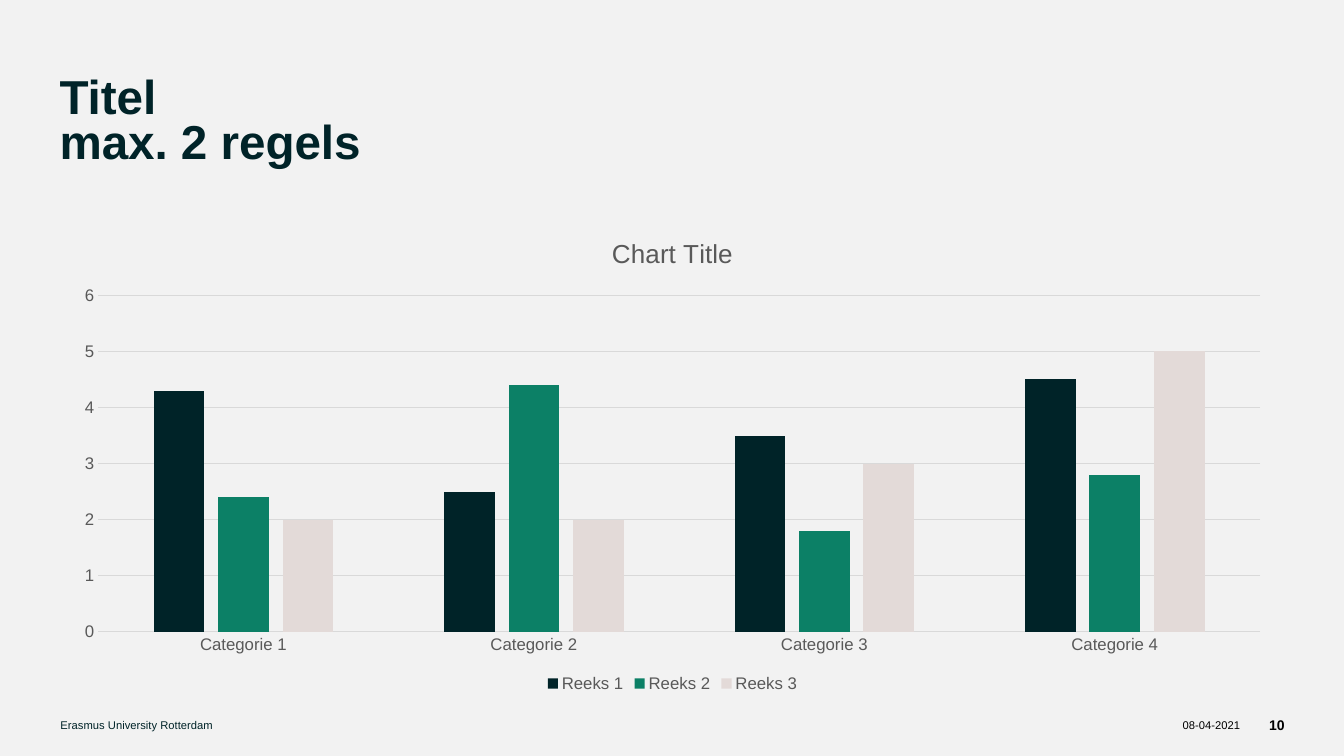
from pptx import Presentation, util as u
from pptx.chart.data import CategoryChartData
from pptx.dml.color import RGBColor
from pptx.enum import chart as ch, text

COLORS = {"back": "F2F2F2", "dark": "002328", "green": "0C8066", "sand": "E3DAD8",
          "black": "000000", "gray": "595959", "grid": "D9D9D9"}


def color(name):
    return RGBColor.from_string(COLORS[name])


def style_font(font, size, color_name, bold=False):
    for key, value in {"name": "Arial", "size": u.Pt(size), "bold": bold}.items():
        setattr(font, key, value)
    font.color.rgb = color(color_name)


# Deck and page
deck = Presentation()
deck.slide_width, deck.slide_height = u.Inches(13.33), u.Inches(7.5)
page = deck.slides.add_slide(deck.slide_layouts[6])
page.background.fill.solid()
page.background.fill.fore_color.rgb = color("back")

# Title and footer
left, right = text.PP_ALIGN.LEFT, text.PP_ALIGN.RIGHT
top, middle = text.MSO_ANCHOR.TOP, text.MSO_ANCHOR.MIDDLE
labels = [
    ("Titel\vmax. 2 regels", (0.59, 0.79, 12.15, 0.78), 34, "dark", True, left, top),
    ("Erasmus University Rotterdam", (0.6, 7.12, 10.79, 0.14), 8, "dark", False, left, middle),
    ("08-04-2021", (11.54, 7.12, 0.76, 0.14), 8, "black", False, right, middle),
    ("10", (12.45, 7.12, 0.29, 0.14), 10, "black", True, right, middle),
]
for words, place, size, color_name, bold, align, anchor in labels:
    box = page.shapes.add_textbox(*map(u.Inches, place))
    frame_format = {"margin_left": 0, "margin_top": 0, "margin_right": 0, "margin_bottom": 0,
                    "word_wrap": True, "vertical_anchor": anchor}
    for key, value in frame_format.items():
        setattr(box.text_frame, key, value)
    para = box.text_frame.paragraphs[0]
    para.text = words
    para.alignment = align
    if anchor == top:
        para.line_spacing = u.Pt(32)
    style_font(para.font, size, color_name, bold)
    for span in para.runs:
        style_font(span.font, size, color_name, bold)

# Chart data
series_rows = [
    ("Reeks 1", (4.3, 2.5, 3.5, 4.5), "dark"),
    ("Reeks 2", (2.4, 4.4, 1.8, 2.8), "green"),
    ("Reeks 3", (2, 2, 3, 5), "sand"),
]
data = CategoryChartData()
data.categories = [f"Categorie {number}" for number in range(1, 5)]
for name, values, _ in series_rows:
    data.add_series(name, values)
place = map(u.Inches, (0.6, 2.15, 12.14, 4.76))
chart = page.shapes.add_chart(ch.XL_CHART_TYPE.COLUMN_CLUSTERED, *place, data).chart
style_font(chart.font, 10, "black")

# Columns
plot = chart.plots[0]
for key, value in {"gap_width": 219, "overlap": -27, "vary_by_categories": False}.items():
    setattr(plot, key, value)
for series, (_, _, color_name) in zip(plot.series, series_rows):
    series.format.fill.solid()
    series.format.fill.fore_color.rgb = color(color_name)

# Chart title and legend
chart.has_title = True
chart.chart_title.include_in_layout = False
para = chart.chart_title.text_frame.paragraphs[0]
span = para.add_run()
span.text = "Chart Title"
for font in (para.font, span.font):
    style_font(font, 18.6, "gray")
chart.has_legend = True
chart.legend.position = ch.XL_LEGEND_POSITION.BOTTOM
chart.legend.include_in_layout = False
style_font(chart.legend.font, 12, "gray")

# Axes and gridlines
for axis in (chart.category_axis, chart.value_axis):
    axis.major_tick_mark = axis.minor_tick_mark = ch.XL_TICK_MARK.NONE
    style_font(axis.tick_labels.font, 12, "gray")
value_axis = chart.value_axis
for key, value in {"minimum_scale": 0, "maximum_scale": 6, "major_unit": 1,
                   "has_major_gridlines": True}.items():
    setattr(value_axis, key, value)
value_axis.format.line.fill.background()
for line in (chart.category_axis.format.line, value_axis.major_gridlines.format.line):
    line.color.rgb = color("grid")
    line.width = u.Pt(0.75)

deck.save("out.pptx")
